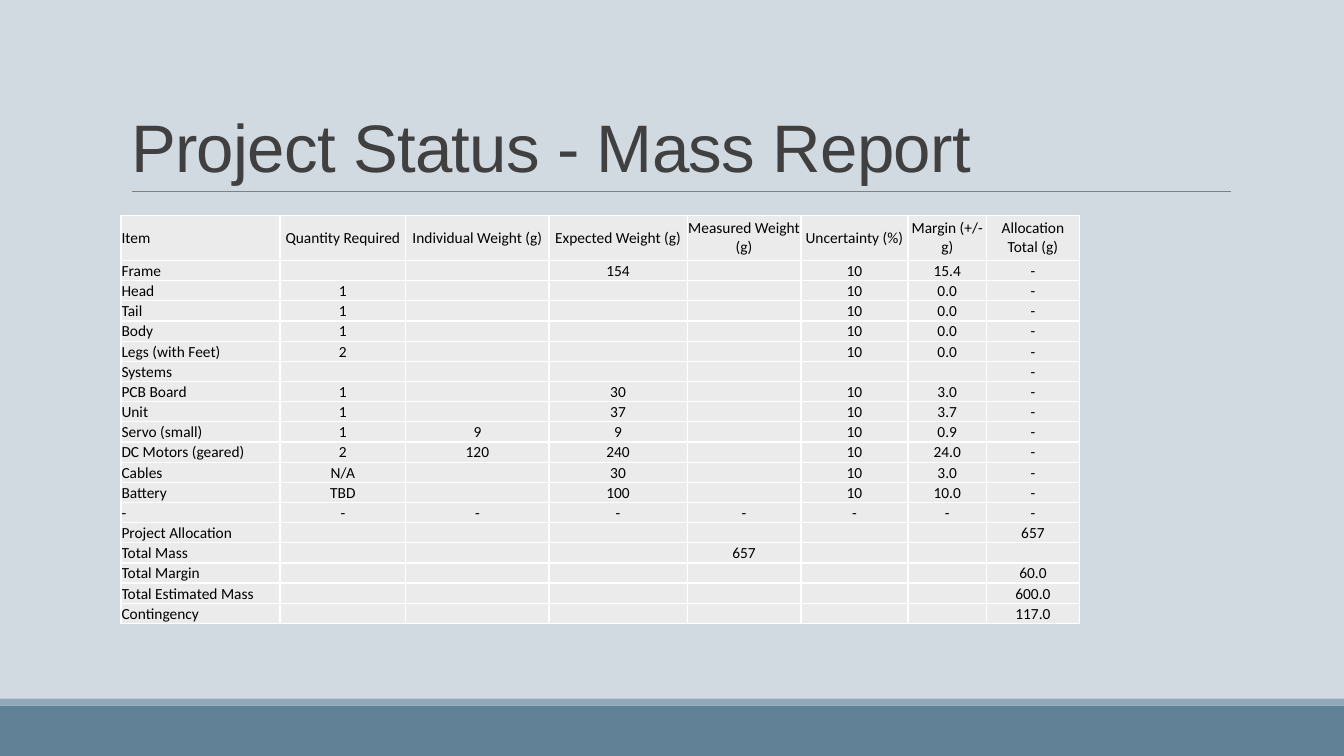
"""Build the mass report slide with its title, footer bands and table."""
from typing import NamedTuple

from lxml import etree
from pptx import Presentation
from pptx.dml import color
from pptx.enum import shapes, text
from pptx.oxml import ns
from pptx.util import Pt


class Band(NamedTuple):
    top: float
    height: float
    fill: str


class Column(NamedTuple):
    heading: str
    width: float


WIDTH, HEIGHT = 960, 540
BANDS = [Band(504, 36, "618197"), Band(499, 5, "92A9B9")]
COLUMNS = [
    Column("Item", 113.6),
    Column("Quantity Required", 89.9),
    Column("Individual Weight (g)", 102.3),
    Column("Expected Weight (g)", 98.7),
    Column("Measured Weight (g)", 81.3),
    Column("Uncertainty (%)", 76.4),
    Column("Margin (+/-g)", 56.2),
    Column("Allocation Total (g)", 66.3),
]
ITEMS = [
    ("Frame", "", "", "154", "", "10", "15.4", "-"),
    ("Head", "1", "", "", "", "10", "0.0", "-"),
    ("Tail", "1", "", "", "", "10", "0.0", "-"),
    ("Body", "1", "", "", "", "10", "0.0", "-"),
    ("Legs (with Feet)", "2", "", "", "", "10", "0.0", "-"),
    ("Systems", "", "", "", "", "", "", "-"),
    ("PCB Board", "1", "", "30", "", "10", "3.0", "-"),
    ("Unit", "1", "", "37", "", "10", "3.7", "-"),
    ("Servo (small)", "1", "9", "9", "", "10", "0.9", "-"),
    ("DC Motors (geared)", "2", "120", "240", "", "10", "24.0", "-"),
    ("Cables", "N/A", "", "30", "", "10", "3.0", "-"),
    ("Battery", "TBD", "", "100", "", "10", "10.0", "-"),
    ("-",) * 8,
    ("Project Allocation", "", "", "", "", "", "", "657"),
    ("Total Mass", "", "", "", "657", "", "", ""),
    ("Total Margin", "", "", "", "", "", "", "60.0"),
    ("Total Estimated Mass", "", "", "", "", "", "", "600.0"),
    ("Contingency", "", "", "", "", "", "", "117.0"),
]
HEADER_HEIGHT, ROW_HEIGHT = 32.4, 14.42
CELL_SIZE = 11


def paint(fill, value: str) -> None:
    fill.solid()
    fill.fore_color.rgb = color.RGBColor.from_string(value)


def format_span(span, font: str, size: float, value: str) -> None:
    span.font.name = font
    span.font.size = Pt(size)
    paint(span.font.fill, value)


def draw_band(slide, band: Band) -> None:
    box = slide.shapes.add_shape(
        shapes.MSO_SHAPE.RECTANGLE, 0, Pt(band.top), Pt(WIDTH), Pt(band.height))
    box.shadow.inherit = False
    paint(box.fill, band.fill)
    box.line.fill.background()


def draw_rule(slide) -> None:
    rule = slide.shapes.add_connector(
        shapes.MSO_CONNECTOR.STRAIGHT, Pt(94.3), Pt(136.8), Pt(879), Pt(136.8))
    paint(rule.line.fill, "808080")
    rule.line.width = Pt(0.5)
    etree.SubElement(rule._element.spPr, ns.qn("a:effectLst"))


def write_title(slide, wording: str) -> None:
    title = slide.shapes.title
    title.left, title.top, title.width, title.height = Pt(86.4), Pt(22.3), Pt(792), Pt(114.5)
    frame = title.text_frame
    frame.text = wording
    frame.word_wrap = True
    frame.auto_size = text.MSO_AUTO_SIZE.NONE
    frame.vertical_anchor = text.MSO_ANCHOR.BOTTOM
    para = frame.paragraphs[0]
    para.alignment = text.PP_ALIGN.LEFT
    para.line_spacing = 0.85
    span = para.runs[0]
    format_span(span, "Arial", 48, "404040")
    span._r.get_or_add_rPr().set("spc", "-50")
    slide.shapes._spTree.append(title._element)


def add_borders(cell) -> None:
    properties = cell._tc.get_or_add_tcPr()
    for side in ("lnL", "lnR", "lnT", "lnB"):
        line = etree.SubElement(properties, ns.qn(f"a:{side}"), w=str(Pt(1)))
        fill = etree.SubElement(line, ns.qn("a:solidFill"))
        etree.SubElement(fill, ns.qn("a:srgbClr"), val="FFFFFF")


def write_cell(cell, wording: str, centred: bool, middle: bool) -> None:
    add_borders(cell)
    paint(cell.fill, "EBEBEB")
    cell.margin_left = cell.margin_right = cell.margin_top = Pt(0.4)
    cell.margin_bottom = 0
    cell.vertical_anchor = text.MSO_ANCHOR.MIDDLE if middle else text.MSO_ANCHOR.BOTTOM
    para = cell.text_frame.paragraphs[0]
    para.text = wording
    para.alignment = text.PP_ALIGN.CENTER if centred else text.PP_ALIGN.LEFT
    for span in para.runs:
        format_span(span, "Calibri", CELL_SIZE, "000000")
    if not wording:
        etree.SubElement(para._p, ns.qn("a:endParaRPr"), sz=str(CELL_SIZE * 100))


def draw_table(slide) -> None:
    rows = [tuple(column.heading for column in COLUMNS), *ITEMS]
    heights = [HEADER_HEIGHT] + [ROW_HEIGHT] * len(ITEMS)
    table = slide.shapes.add_table(
        len(rows), len(COLUMNS), Pt(86.4), Pt(153.7),
        Pt(sum(column.width for column in COLUMNS)), Pt(sum(heights))).table
    table.first_row = table.horz_banding = False
    for table_column, column in zip(table.columns, COLUMNS):
        table_column.width = Pt(column.width)
    for i, (row, height) in enumerate(zip(rows, heights)):
        table.rows[i].height = Pt(height)
        for j, wording in enumerate(row):
            middle = i == 0 or wording.startswith("DC Motors")
            write_cell(table.cell(i, j), wording, j > 0, middle)


def main() -> None:
    deck = Presentation()
    deck.slide_width, deck.slide_height = Pt(WIDTH), Pt(HEIGHT)
    page = deck.slides.add_slide(deck.slide_layouts.get_by_name("Title Only"))
    paint(page.background.fill, "D1D9E1")
    for band in BANDS:
        draw_band(page, band)
    draw_rule(page)
    write_title(page, "Project Status - Mass Report")
    draw_table(page)
    deck.save("out.pptx")


if __name__ == "__main__":
    main()
